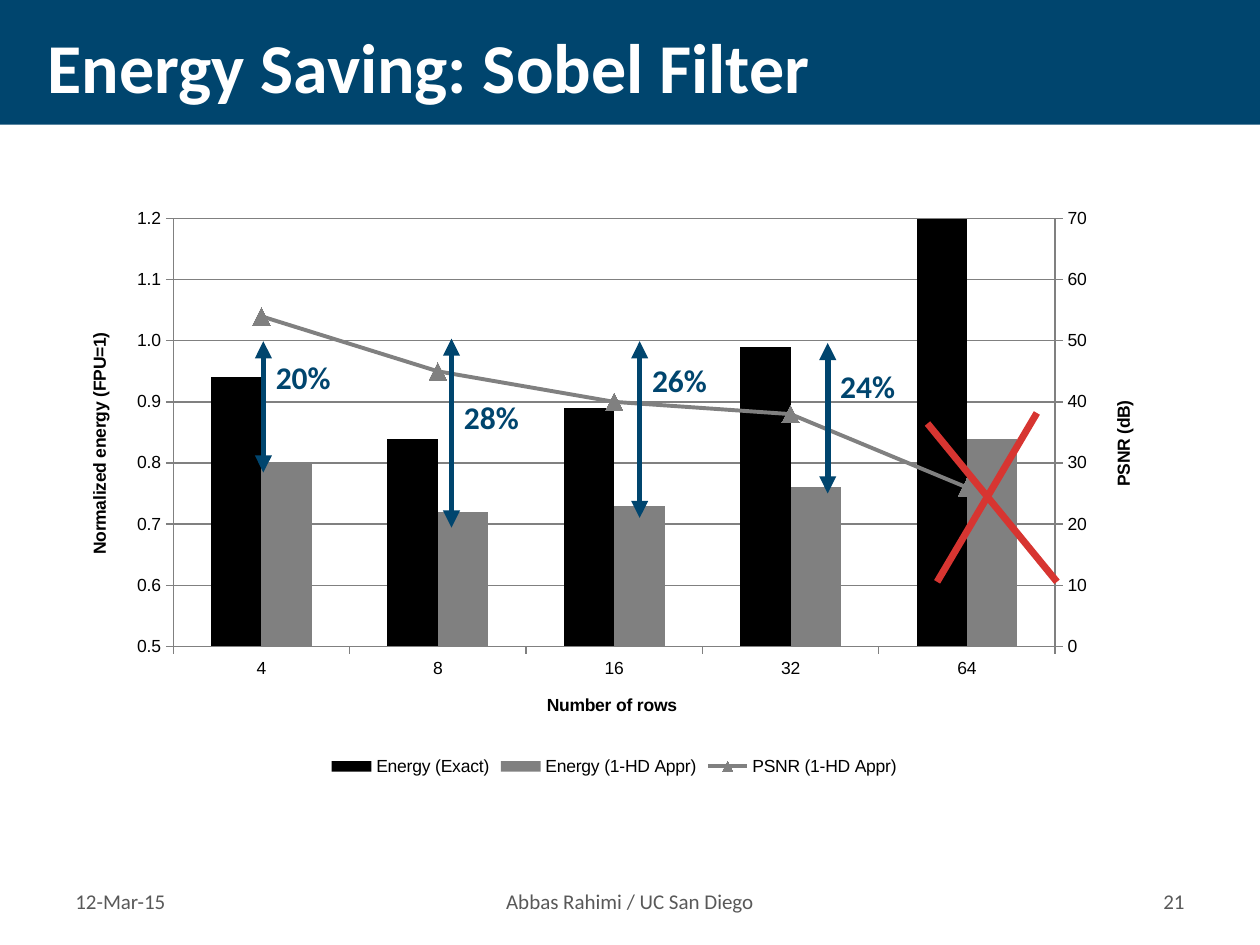
from copy import deepcopy
from dataclasses import dataclass

from lxml import etree
from pptx import Presentation
from pptx.chart import axis as axes
from pptx.chart import data as chart_data
from pptx.dml.color import RGBColor
from pptx.enum import chart as charts, shapes, text
from pptx.oxml import ns
from pptx.util import Pt


@dataclass(frozen=True)
class Theme:
    navy: str = "00456E"
    white: str = "FFFFFF"
    footer: str = "595959"
    black: str = "000000"
    gray: str = "808080"
    red: str = "D73531"
    font: str = "Calibri"
    chart_font: str = "Arial"
    title_size: int = 40
    label_size: int = 18
    footer_size: int = 12
    chart_size: int = 10


THEME = Theme()
CATEGORIES = ["4", "8", "16", "32", "64"]
SERIES = {
    "Energy (Exact)": [0.94, 0.84, 0.89, 0.99, 1.2],
    "Energy (1-HD Appr)": [0.8, 0.72, 0.73, 0.76, 0.84],
    "PSNR (1-HD Appr)": [54, 45, 40, 38, 26],
}
# label, arrow top, arrow bottom, label top
SAVINGS = [
    ("20%", 195, 270, 201),
    ("28%", 193.5, 301.5, 224),
    ("26%", 195, 296, 202.5),
    ("24%", 196, 282, 206),
]
FIRST_SAVING, SAVING_STEP = 150.5, 107.5
CROSS = [(592.5, 236, 535.5, 332.5), (604, 332.5, 530, 242)]


def color(value):
    return RGBColor.from_string(value)


def child(parent, tag, **attributes):
    return etree.SubElement(parent, ns.qn(tag), attributes)


def remove_children(parent, tag):
    for element in parent.findall(ns.qn(tag)):
        parent.remove(element)


def set_font(font, size, fill, name=THEME.font, bold=False):
    font.size, font.name, font.bold = Pt(size), name, bold
    font.color.rgb = color(fill)


def write(shape, words, align=text.PP_ALIGN.LEFT, anchor=text.MSO_ANCHOR.TOP,
          wrap=True, **font):
    frame = shape.text_frame
    frame.text = words
    frame.word_wrap, frame.vertical_anchor = wrap, anchor
    frame.auto_size = text.MSO_AUTO_SIZE.NONE
    paragraph = frame.paragraphs[0]
    paragraph.alignment = align
    set_font(paragraph.runs[0].font, **font)


def add_line(container, ends, fill, width, arrows=False):
    line = container.add_connector(shapes.MSO_CONNECTOR.STRAIGHT, *map(Pt, ends))
    line.line.color.rgb, line.line.width = color(fill), Pt(width)
    if arrows:
        outline = line.line._get_or_add_ln()
        for end in ("a:headEnd", "a:tailEnd"):
            child(outline, end, type="triangle")
    child(line._element.spPr, "a:effectLst")


def add_title(slide):
    bar = slide.shapes.add_shape(shapes.MSO_SHAPE.RECTANGLE, 0, 0, Pt(720), Pt(71.3))
    bar.shadow.inherit = False
    bar.fill.solid()
    bar.fill.fore_color.rgb = color(THEME.navy)
    bar.line.fill.background()
    title = slide.shapes.title
    title._element.addprevious(bar._element)
    title.left, title.top, title.width, title.height = map(Pt, (20, 7, 680, 60.5))
    write(title, "Energy Saving: Sobel Filter", anchor=text.MSO_ANCHOR.MIDDLE,
          wrap=False, size=THEME.title_size, fill=THEME.white, bold=True)


def add_footer(slide):
    align = text.PP_ALIGN
    for words, left, width, side in (
        ("12-Mar-15", 36, 85.5, align.LEFT),
        ("Abbas Rahimi / UC San Diego", 133, 454, align.CENTER),
        ("21", 598.5, 85.5, align.RIGHT),
    ):
        box = slide.shapes.add_textbox(Pt(left), Pt(500.5), Pt(width), Pt(28.8))
        write(box, words, align=side, anchor=text.MSO_ANCHOR.MIDDLE,
              size=THEME.footer_size, fill=THEME.footer)


def format_axis(axis, title):
    frame = axis.axis_title.text_frame
    frame.text = title
    set_font(frame.paragraphs[0].runs[0].font, THEME.chart_size, THEME.black,
             THEME.chart_font, bold=True)
    axis.format.line.color.rgb = color(THEME.gray)
    axis.major_tick_mark = charts.XL_TICK_MARK.OUTSIDE


def format_value_axis(axis, title, low, high, step, number_format):
    format_axis(axis, title)
    body = axis.axis_title.text_frame._txBody.bodyPr
    body.set("rot", "-5400000")
    body.set("vert", "horz")
    axis.minimum_scale, axis.maximum_scale, axis.major_unit = low, high, step
    axis.tick_labels.number_format = number_format
    axis.tick_labels.number_format_is_linked = False


def link_axis(element, axis_id, cross_id):
    element.find(ns.qn("c:axId")).set("val", axis_id)
    element.find(ns.qn("c:crossAx")).set("val", cross_id)


def move_last_series_to_right_axis(chart):
    """Turn the last column series into a line with its own pair of axes."""
    bars = chart.plots[0]._element
    series = bars.findall(ns.qn("c:ser"))[-1]
    remove_children(series, "c:invertIfNegative")
    line_plot = child(bars.getparent(), "c:lineChart")
    bars.addnext(line_plot)
    child(line_plot, "c:grouping", val="standard")
    child(line_plot, "c:varyColors", val="0")
    line_plot.append(series)
    child(line_plot, "c:marker", val="1")
    category_id, value_id = "50010", "50020"
    for axis_id in (category_id, value_id):
        child(line_plot, "c:axId", val=axis_id)

    left = chart.value_axis._element
    right, hidden = deepcopy(left), deepcopy(chart.category_axis._element)
    left.addnext(right)
    right.addnext(hidden)
    link_axis(right, value_id, category_id)
    link_axis(hidden, category_id, value_id)
    right.find(ns.qn("c:axPos")).set("val", "r")
    right.find(ns.qn("c:crosses")).set("val", "max")
    right_axis, hidden_axis = axes.ValueAxis(right), axes.CategoryAxis(hidden)
    right_axis.has_major_gridlines = False
    hidden_axis.has_title = hidden_axis.visible = False
    return right_axis


def place_plot(chart, **fractions):
    area = chart._chartSpace.chart.plotArea
    remove_children(area, "c:layout")
    layout = child(area, "c:layout")
    area.insert(0, layout)
    manual = child(layout, "c:manualLayout")
    child(manual, "c:layoutTarget", val="inner")
    for mode in ("c:xMode", "c:yMode"):
        child(manual, mode, val="edge")
    for key, value in fractions.items():
        child(manual, f"c:{key}", val=str(value))


def add_energy_chart(slide):
    data = chart_data.CategoryChartData()
    data.categories = CATEGORIES
    for name, values in SERIES.items():
        data.add_series(name, values)
    chart = slide.shapes.add_chart(
        charts.XL_CHART_TYPE.COLUMN_CLUSTERED, *map(Pt, (36, 111.5, 630, 335)), data).chart
    chart.has_title = False
    set_font(chart.font, THEME.chart_size, THEME.black, THEME.chart_font)
    chart.has_legend = True
    chart.legend.position = charts.XL_LEGEND_POSITION.BOTTOM
    chart.legend.include_in_layout = False

    format_axis(chart.category_axis, "Number of rows")
    format_value_axis(chart.value_axis, "Normalized energy (FPU=1)", 0.5, 1.2, 0.1, "0.0")
    chart.value_axis.major_gridlines.format.line.color.rgb = color(THEME.gray)
    right_axis = move_last_series_to_right_axis(chart)
    format_value_axis(right_axis, "PSNR (dB)", 0, 70, 10, "0")
    place_plot(chart, x=0.1, y=0.04, w=0.8, h=0.73)

    columns, lines = chart.plots
    columns.gap_width, columns.overlap = 150, 0
    columns.vary_by_categories = False
    for series, fill in zip(columns.series, (THEME.black, THEME.gray)):
        series.format.fill.solid()
        series.format.fill.fore_color.rgb = color(fill)
    psnr = lines.series[0]
    psnr.smooth = False
    psnr.format.line.color.rgb, psnr.format.line.width = color(THEME.gray), Pt(2.25)
    psnr.marker.style, psnr.marker.size = charts.XL_MARKER_STYLE.TRIANGLE, 10
    psnr.marker.format.fill.solid()
    psnr.marker.format.fill.fore_color.rgb = color(THEME.gray)
    psnr.marker.format.line.color.rgb = color(THEME.gray)


def add_cross(slide):
    group = slide.shapes.add_group_shape()
    for ends in CROSS:
        add_line(group.shapes, ends, THEME.red, 4)


def add_saving(slide, left, label, top, bottom, label_top):
    group = slide.shapes.add_group_shape()
    add_line(group.shapes, (left, top, left, bottom), THEME.navy, 3.25, arrows=True)
    box = group.shapes.add_textbox(Pt(left), Pt(label_top), Pt(51), Pt(29))
    write(box, label, size=THEME.label_size, fill=THEME.navy, bold=True)


def main():
    presentation = Presentation()
    presentation.slide_width, presentation.slide_height = Pt(720), Pt(540)
    slide = presentation.slides.add_slide(presentation.slide_layouts[5])
    add_title(slide)
    add_footer(slide)
    add_energy_chart(slide)
    add_cross(slide)
    for index, saving in enumerate(SAVINGS):
        add_saving(slide, FIRST_SAVING + index * SAVING_STEP, *saving)
    presentation.save("out.pptx")


if __name__ == "__main__":
    main()
